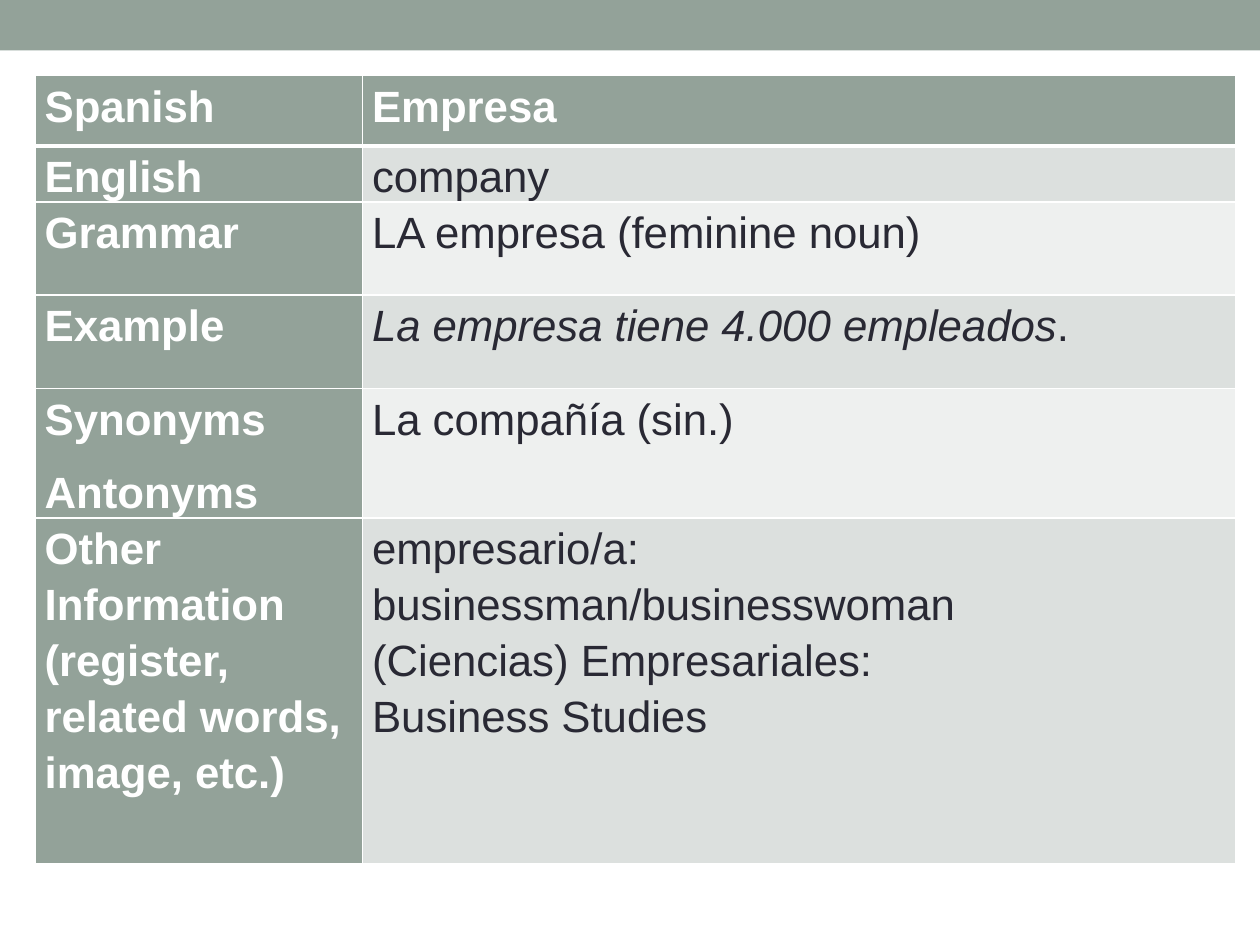
from lxml import etree
from pptx import Presentation
from pptx.dml.color import RGBColor
from pptx.enum.shapes import MSO_SHAPE
from pptx.enum.text import PP_ALIGN
from pptx.oxml.ns import qn
from pptx.util import Cm, Pt

RECT = MSO_SHAPE.RECTANGLE
LEFT, JUSTIFY = PP_ALIGN.LEFT, PP_ALIGN.JUSTIFY

SAGE, WHITE, INK = "93A299", "FFFFFF", "292934"
BANDS = ("EEF0EF", "DCE0DE")
COL_WIDTHS = (6.6, 17.6)
ROW_HEIGHTS = (1.42, 0.91, 1.88, 1.88, 2.26, 6.96)

SPACED = {"alignment": JUSTIFY, "line_spacing": 1.15, "space_after": Pt(10)}
SPACED_LEFT = {**SPACED, "alignment": LEFT}
TIGHT = {**SPACED_LEFT, "space_after": Pt(0)}
MARGINS = {"margin_left": Cm(0.19), "margin_right": Cm(0.19),
           "margin_top": 0, "margin_bottom": 0}

ROWS = [
    ([("Spanish", SPACED)], [("Empresa", SPACED)]),
    ([("English", SPACED)], [("company", SPACED)]),
    ([("Grammar", SPACED)], [("LA empresa (feminine noun)", SPACED)]),
    ([("Example", SPACED)],
     [(("La empresa tiene 4.000 empleados", "."), SPACED)]),
    ([("Synonyms", SPACED_LEFT), ("Antonyms", SPACED)],
     [("La compañía (sin.)", SPACED)]),
    ([("Other Information (register, related words, image, etc.)", SPACED_LEFT)],
     [("empresario/a: businessman/businesswoman", TIGHT),
      ("(Ciencias) Empresariales:", TIGHT),
      ("Business Studies", TIGHT)]),
]


def rgb(value):
    """Return the colour for a hex string."""
    return RGBColor.from_string(value)


def apply(obj, values):
    """Set each attribute of obj from a dict of format values."""
    for name, value in values.items():
        setattr(obj, name, value)


def add_bar(slide, width, height):
    """Draw the plain band along the top edge."""
    sp = slide.shapes.add_shape(RECT, 0, 0, width, height)
    sp.shadow.inherit = False
    sp.fill.solid()
    sp.fill.fore_color.rgb = rgb(SAGE)
    sp.line.fill.background()


def add_run(p, text, color, bold, italic):
    """Append one formatted run to a paragraph."""
    r = p.add_run()
    r.text = text
    apply(r.font, {"name": "Arial", "size": Pt(25), "bold": bold, "italic": italic})
    r.font.color.rgb = rgb(color)


def set_borders(cell, widths):
    """Give a cell white borders of the given point widths by side."""
    tc_pr = cell._tc.get_or_add_tcPr()
    for side, width in widths.items():
        ln = etree.SubElement(tc_pr, qn(f"a:ln{side}"), w=str(Pt(width)))
        fill = etree.SubElement(ln, qn("a:solidFill"))
        etree.SubElement(fill, qn("a:srgbClr"), val=WHITE)


def fill_cell(cell, paragraphs, row, col):
    """Write and format one cell according to its row and column."""
    heading = row == 0 or col == 0
    apply(cell, MARGINS)
    set_borders(cell, {"L": 1, "R": 1, "T": 3 if row == 1 else 1,
                       "B": 3 if row == 0 else 1})
    cell.fill.solid()
    cell.fill.fore_color.rgb = rgb(SAGE if heading else BANDS[row % 2])
    tf = cell.text_frame
    for i, (text, fmt) in enumerate(paragraphs):
        p = tf.add_paragraph() if i else tf.paragraphs[0]
        apply(p, fmt)
        parts = (text,) if isinstance(text, str) else text
        for part in parts:
            italic = len(parts) > 1 and part == parts[0]
            add_run(p, part, WHITE if heading else INK, heading, italic)


def add_word_table(slide):
    """Add the vocabulary table."""
    table = slide.shapes.add_table(
        len(ROWS), len(COL_WIDTHS), Cm(0.71), Cm(1.52),
        Cm(sum(COL_WIDTHS)), Cm(sum(ROW_HEIGHTS))).table
    for column, width in zip(table.columns, COL_WIDTHS):
        column.width = Cm(width)
    for i, (height, cells) in enumerate(zip(ROW_HEIGHTS, ROWS)):
        table.rows[i].height = Cm(height)
        for j, paragraphs in enumerate(cells):
            fill_cell(table.cell(i, j), paragraphs, i, j)


def main():
    """Build and save the slide."""
    prs = Presentation()
    apply(prs, {"slide_width": Cm(25.4), "slide_height": Cm(19.05)})
    slide = prs.slides.add_slide(prs.slide_layouts[6])
    add_bar(slide, prs.slide_width, Cm(1.02))
    add_word_table(slide)
    prs.save("out.pptx")


if __name__ == "__main__":
    main()
